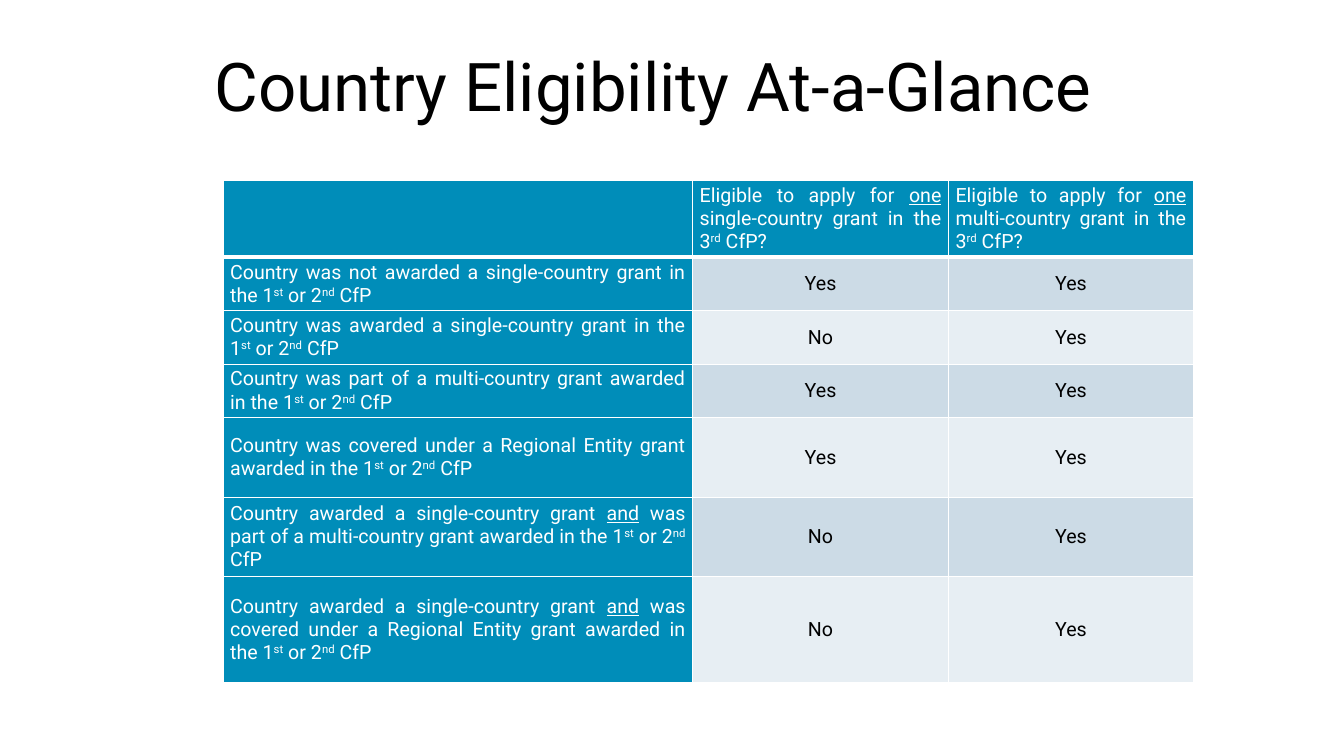
from dataclasses import dataclass

from lxml import etree
from pptx import Presentation
from pptx import util as u
from pptx.dml.color import RGBColor
from pptx.enum import text
from pptx.oxml import ns

SLIDE_WIDTH, SLIDE_HEIGHT = u.Inches(13.33), u.Inches(7.5)


@dataclass(frozen=True)
class Theme:
    font: str = "Roboto"
    title_size: int = 48
    table_size: int = 14
    ink: str = "000000"
    light: str = "FFFFFF"
    label_fill: str = "008DB9"
    bands: tuple = ("CCDBE6", "E7EEF3")
    rule: float = 1
    header_rule: float = 3


THEME = Theme()

TITLE = "Country Eligibility At-a-Glance"
COLUMN_WEIGHTS = (4.66, 2.54, 2.43)
ROW_WEIGHTS = (0.76, 0.53, 0.53, 0.53, 0.79, 0.79, 1.05)
CALLS = "1|^st| or 2|^nd| CfP"
HEADER = ("",) + tuple(
    f"Eligible to apply for |_one| {kind}-country grant in the 3|^rd| CfP?"
    for kind in ("single", "multi")
)
ELIGIBILITY = (
    (f"Country was not awarded a single-country grant in the {CALLS}", "Yes", "Yes"),
    (f"Country was awarded a single-country grant in the {CALLS}", "No", "Yes"),
    (f"Country was part of a multi-country grant awarded in the {CALLS}", "Yes", "Yes"),
    (f"Country was covered under a Regional Entity grant awarded in the {CALLS}", "Yes", "Yes"),
    (f"Country awarded a single-country grant |_and| was part of a multi-country grant awarded in the {CALLS}", "No", "Yes"),
    (f"Country awarded a single-country grant |_and| was covered under a Regional Entity grant awarded in the {CALLS}", "No", "Yes"),
)


def share_box(left, top, width, height):
    return (
        round(left * SLIDE_WIDTH),
        round(top * SLIDE_HEIGHT),
        round(width * SLIDE_WIDTH),
        round(height * SLIDE_HEIGHT),
    )


def write(para, content, size, color, align, line_spacing=1.0, space_after=0):
    para.alignment = align
    para.line_spacing = line_spacing
    para.space_before = u.Pt(0)
    para.space_after = u.Pt(space_after)
    for piece in content.split("|"):
        span = para.add_run()
        span.text = piece.lstrip("_^")
        span.font.name = THEME.font
        span.font.size = u.Pt(size)
        span.font.color.rgb = RGBColor.from_string(color)
        if piece.startswith("_"):
            span.font.underline = True
        if piece.startswith("^"):
            span.font._element.set("baseline", "30000")


def add_borders(cell, **widths):
    properties = cell._tc.get_or_add_tcPr()
    for side in ("L", "R", "T", "B"):
        width = u.Pt(widths.get(side, THEME.rule))
        line = etree.SubElement(properties, ns.qn(f"a:ln{side}"), w=str(width))
        fill = etree.SubElement(line, ns.qn("a:solidFill"))
        etree.SubElement(fill, ns.qn("a:srgbClr"), val=THEME.light)


def add_title(page, box):
    title = page.shapes.title
    title.left, title.top, title.width, title.height = box
    frame = title.text_frame
    frame.word_wrap = True
    frame.auto_size = text.MSO_AUTO_SIZE.NONE
    frame.vertical_anchor = text.MSO_ANCHOR.TOP
    write(frame.paragraphs[0], TITLE, THEME.title_size, THEME.ink,
          text.PP_ALIGN.LEFT, line_spacing=0.9)


def fill_cell(cell, content, row, column):
    is_label = row == 0 or column == 0
    add_borders(
        cell,
        T=THEME.header_rule if row == 1 else THEME.rule,
        B=THEME.header_rule if row == 0 else THEME.rule,
    )
    cell.fill.solid()
    fill = THEME.label_fill if is_label else THEME.bands[(row - 1) % 2]
    cell.fill.fore_color.rgb = RGBColor.from_string(fill)
    cell.vertical_anchor = text.MSO_ANCHOR.MIDDLE
    cell.margin_left = cell.margin_right = u.Inches(0.07)
    cell.margin_top = cell.margin_bottom = 0
    if content:
        write(
            cell.text_frame.paragraphs[0],
            content,
            THEME.table_size,
            THEME.light if is_label else THEME.ink,
            text.PP_ALIGN.JUSTIFY if is_label else text.PP_ALIGN.CENTER,
            space_after=8,
        )


def add_eligibility_table(page, box):
    rows = (HEADER, *ELIGIBILITY)
    table = page.shapes.add_table(len(rows), len(HEADER), *box).table
    table.horz_banding = False
    for column, weight in zip(table.columns, COLUMN_WEIGHTS):
        column.width = round(box[2] * weight / sum(COLUMN_WEIGHTS))
    for line, weight in zip(table.rows, ROW_WEIGHTS):
        line.height = round(box[3] * weight / sum(ROW_WEIGHTS))
    for row, contents in enumerate(rows):
        for column, content in enumerate(contents):
            fill_cell(table.cell(row, column), content, row, column)


def main():
    deck = Presentation()
    deck.slide_width, deck.slide_height = SLIDE_WIDTH, SLIDE_HEIGHT
    page = deck.slides.add_slide(deck.slide_layouts[5])
    add_title(page, share_box(0.152, 0.064, 0.861, 0.088))
    add_eligibility_table(page, share_box(0.166, 0.239, 0.722, 0.664))
    deck.save("out.pptx")


if __name__ == "__main__":
    main()
